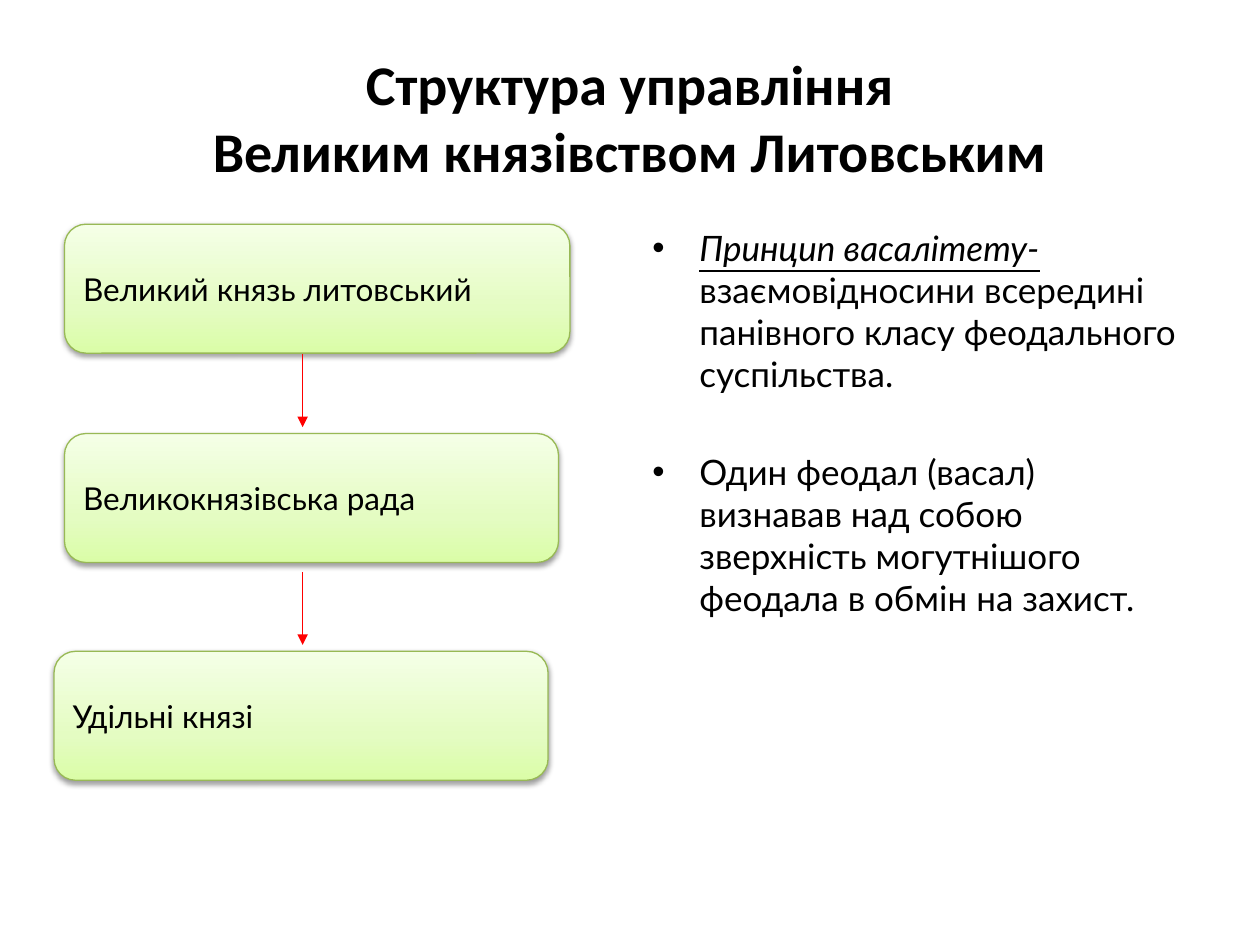
from copy import deepcopy

from lxml import etree
from pptx import Presentation
from pptx.dml.color import RGBColor
from pptx.enum import shapes, text
from pptx.oxml import ns
from pptx.util import Cm, Pt

BLACK = RGBColor(0x00, 0x00, 0x00)
RED = RGBColor(0xFF, 0x00, 0x00)
OLIVE = RGBColor(0x98, 0xB9, 0x55)
GREENS = [
    (0, RGBColor(0xDA, 0xFD, 0xA7)),
    (0.35, RGBColor(0xE4, 0xFC, 0xC2)),
    (1, RGBColor(0xF5, 0xFF, 0xE7)),
]

TITLE_FONT = {"name": "Calibri", "size": Pt(32), "bold": True}
LEVEL_FONT = {"name": "Lato", "size": Pt(18)}
BODY_FONT = {"name": "Lato", "size": Pt(20)}
TERM_FONT = {**BODY_FONT, "italic": True, "underline": True}

# Levels of government: name, left, top and width in the column
LEVELS = [
    ("Великий князь литовський", 0.21, 0, 10.19),
    ("Великокнязівська рада", 0.21, 4.22, 9.96),
    ("Удільні князі", 0, 8.61, 9.96),
]
LEVEL_HEIGHT = 2.6
ARROW_X, ARROW_LENGTH, ARROW_GAP = 5.01, 1.47, 0.13

# Each principle is a list of runs: wording and font
PRINCIPLES = [
    [
        ("Принцип васалітету-", TERM_FONT),
        (" взаємовідносини всередині панівного класу феодального суспільства.", BODY_FONT),
    ],
    [
        ("Один феодал (васал) визнавав над собою зверхність могутнішого "
         "феодала в обмін на захист.", BODY_FONT),
    ],
]


def add_xml(parent, tag, **attributes):
    return etree.SubElement(parent, ns.qn(tag), attributes)


def set_font(font, values):
    for key, value in values.items():
        setattr(font, key, value)
    font.color.rgb = BLACK


def place_title(slide, left, top, width, height):
    title = slide.shapes.title
    title.left, title.top, title.width, title.height = map(Cm, (left, top, width, height))
    frame = title.text_frame
    frame.text = "Структура управління\vВеликим князівством Литовським"
    frame.vertical_anchor = text.MSO_ANCHOR.MIDDLE
    heading = frame.paragraphs[0]
    heading.alignment = text.PP_ALIGN.CENTER
    for run in heading.runs:
        set_font(run.font, TITLE_FONT)


def fill_green(shape):
    shape.fill.gradient()
    shape.fill.gradient_angle = 90
    stops = shape._element.spPr.find(".//" + ns.qn("a:gsLst"))
    stops.insert(1, deepcopy(stops[0]))
    for stop, (position, color) in zip(shape.fill.gradient_stops, GREENS):
        stop.position = position
        stop.color.rgb = color


def add_soft_shadow(shape):
    shape.shadow.inherit = False
    effects = shape._element.spPr.find(ns.qn("a:effectLst"))
    shadow = add_xml(effects, "a:outerShdw", blurRad=str(Pt(3.1)), dist=str(Pt(1.6)),
                     dir="5400000", rotWithShape="0")
    color = add_xml(shadow, "a:srgbClr", val=str(BLACK))
    add_xml(color, "a:alpha", val="38000")


def add_level(slide, name, left, top, width, height):
    level = slide.shapes.add_shape(
        shapes.MSO_SHAPE.ROUNDED_RECTANGLE, *map(Cm, (left, top, width, height)))
    fill_green(level)
    add_soft_shadow(level)
    level.line.color.rgb = OLIVE
    level.line.width = Pt(0.75)
    frame = level.text_frame
    frame.word_wrap = True
    frame.vertical_anchor = text.MSO_ANCHOR.MIDDLE
    label = frame.paragraphs[0]
    label.alignment = text.PP_ALIGN.LEFT
    run = label.add_run()
    run.text = name
    set_font(run.font, LEVEL_FONT)


def add_arrow(slide, x, top, bottom):
    arrow = slide.shapes.add_connector(
        shapes.MSO_CONNECTOR.STRAIGHT, *map(Cm, (x, top, x, bottom)))
    arrow.line.color.rgb = RED
    arrow.line.width = Pt(0.75)
    add_xml(arrow.line._get_or_add_ln(), "a:tailEnd", type="triangle")
    add_xml(arrow._element.spPr, "a:effectLst")


def place_hierarchy(slide, left, top):
    for index, (name, dx, dy, width) in enumerate(LEVELS):
        add_level(slide, name, left + dx, top + dy, width, LEVEL_HEIGHT)
        if index:  # arrow from the level above
            tip = top + dy - ARROW_GAP
            add_arrow(slide, left + ARROW_X, tip - ARROW_LENGTH, tip)


def place_principles(slide, left, top, width, height):
    frame = slide.shapes.add_textbox(*map(Cm, (left, top, width, height))).text_frame
    frame.word_wrap = True
    for index, runs in enumerate(PRINCIPLES):
        principle = frame.paragraphs[0] if index == 0 else frame.add_paragraph()
        properties = principle._p.get_or_add_pPr()
        properties.set("marL", str(Cm(0.95)))
        properties.set("indent", str(-Cm(0.95)))
        add_xml(properties, "a:buFont", typeface="Arial")
        add_xml(properties, "a:buChar", char="•")
        if index:
            principle.space_before = Pt(31.5)
        for wording, font in runs:
            run = principle.add_run()
            run.text = wording
            set_font(run.font, font)


def main():
    deck = Presentation()
    deck.slide_width, deck.slide_height = Cm(25.4), Cm(19.05)
    slide = deck.slides.add_slide(deck.slide_layouts[5])  # title only
    place_title(slide, 1.27, 0.76, 22.86, 3.18)
    place_hierarchy(slide, 1.09, 4.52)
    place_principles(slide, 12.9, 4.45, 11.23, 9.73)
    deck.save("out.pptx")


if __name__ == "__main__":
    main()
